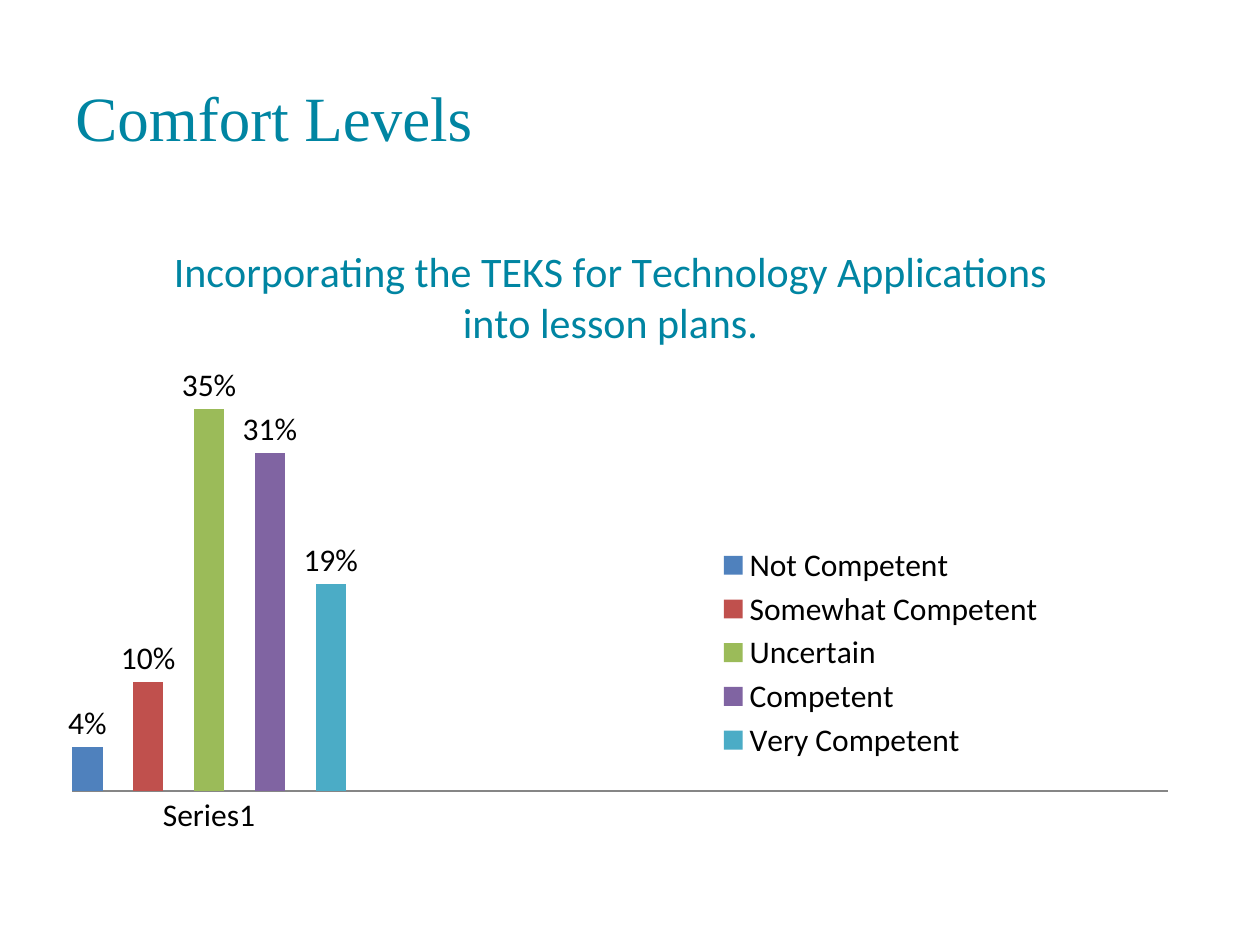
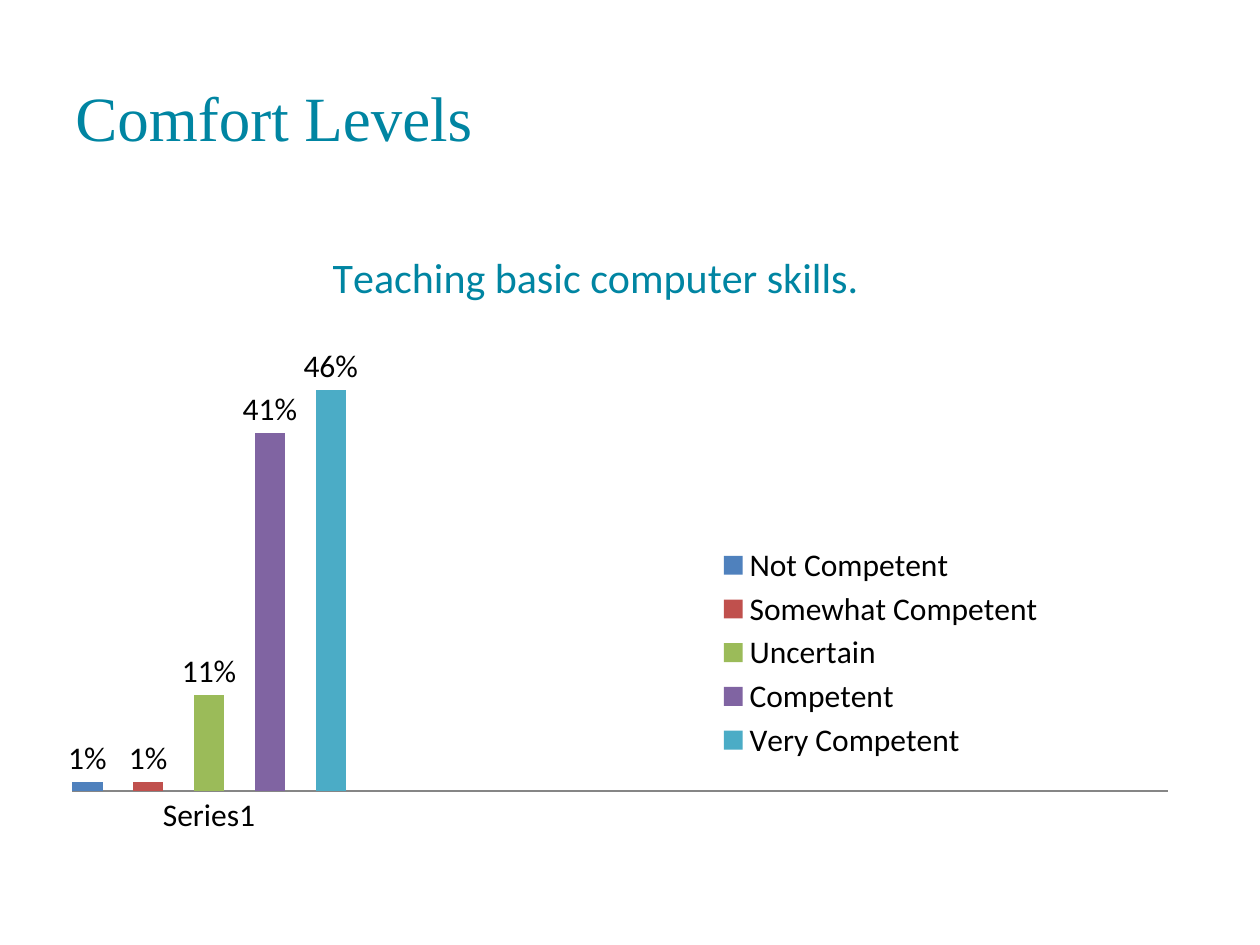
import pptx
import pptx.chart.data
import pptx.dml.color
import pptx.enum.chart
import pptx.enum.text
import pptx.oxml
import pptx.oxml.ns
import pptx.util
from pptx.dml.color import RGBColor
from pptx.util import Inches, Pt

TEAL = RGBColor(0x00, 0x85, 0xA2)
BLACK = RGBColor(0x00, 0x00, 0x00)
WHITE = RGBColor(0xFF, 0xFF, 0xFF)
AXIS_GRAY = RGBColor(0x86, 0x86, 0x86)
LEVELS = {
    "Not Competent": RGBColor(0x4F, 0x81, 0xBD),
    "Somewhat Competent": RGBColor(0xC0, 0x50, 0x4D),
    "Uncertain": RGBColor(0x9B, 0xBB, 0x59),
    "Competent": RGBColor(0x80, 0x64, 0xA2),
    "Very Competent": RGBColor(0x4B, 0xAC, 0xC6),
}
CATEGORIES = ["Series1", "", "", ""]
TITLE_FONT = "Times New Roman"
CHART_FONT = "Calibri"


def format_font(font, name, size, color):
    font.name = name
    font.size = Pt(size)
    font.bold = False
    font.color.rgb = color


def add_slide(presentation, title):
    slide = presentation.slides.add_slide(presentation.slide_layouts[6])
    slide.background.fill.solid()
    slide.background.fill.fore_color.rgb = WHITE
    title_box = slide.shapes.add_textbox(
        Inches(0.5), Inches(0.3), Inches(8.21), Inches(1.25))
    text_frame = title_box.text_frame
    text_frame.word_wrap = True
    text_frame.vertical_anchor = pptx.enum.text.MSO_ANCHOR.MIDDLE
    text_frame.text = title
    format_font(text_frame.paragraphs[0].runs[0].font, TITLE_FONT, 36, TEAL)
    return slide


def set_layout(element, index, inner=False, **fractions):
    for old_layout in element.findall(pptx.oxml.ns.qn("c:layout")):
        element.remove(old_layout)
    target = '<c:layoutTarget val="inner"/>' if inner else ""
    modes = "".join(f'<c:{key}Mode val="edge"/>' for key in "xy")
    values = "".join(
        f'<c:{key} val="{value}"/>' for key, value in fractions.items())
    element.insert(index, pptx.oxml.parse_xml(
        f'<c:layout {pptx.oxml.ns.nsdecls("c")}><c:manualLayout>'
        f'{target}{modes}{values}</c:manualLayout></c:layout>'))


def format_title(chart, text, x, y):
    chart.has_title = True
    title = chart.chart_title
    title.text_frame.text = text
    format_font(title.text_frame.paragraphs[0].runs[0].font,
                CHART_FONT, 24, TEAL)
    title.include_in_layout = False
    set_layout(title._element, 1, x=x, y=y)


def format_legend(chart):
    chart.has_legend = True
    legend = chart.legend
    legend.position = pptx.enum.chart.XL_LEGEND_POSITION.BOTTOM
    legend.include_in_layout = False
    format_font(legend.font, CHART_FONT, 18, BLACK)
    set_layout(legend._element, 1, x=0.57, y=0.53, w=0.32, h=0.36)


def format_axes(chart, maximum):
    no_ticks = pptx.enum.chart.XL_TICK_MARK.NONE
    category_axis = chart.category_axis
    category_axis.major_tick_mark = no_ticks
    category_axis.minor_tick_mark = no_ticks
    category_axis.has_major_gridlines = False
    category_axis.format.line.color.rgb = AXIS_GRAY
    category_axis.format.line.width = Pt(0.75)
    value_axis = chart.value_axis
    value_axis.minimum_scale = 0
    value_axis.maximum_scale = maximum
    value_axis.has_major_gridlines = False
    value_axis.visible = False


def format_columns(plot):
    plot.gap_width = 0
    plot.overlap = -100
    plot.vary_by_categories = False
    for series, color in zip(plot.series, LEVELS.values()):
        series.format.fill.solid()
        series.format.fill.fore_color.rgb = color
        series.invert_if_negative = False
        labels = series.data_labels
        labels.show_value = True
        labels.number_format = "0%"
        labels.number_format_is_linked = False
        labels.position = pptx.enum.chart.XL_LABEL_POSITION.OUTSIDE_END
        format_font(labels.font, CHART_FONT, 18, BLACK)


def add_comfort_chart(slide, question, title_x, title_y, shares, maximum):
    chart_data = pptx.chart.data.CategoryChartData(number_format="0%")
    chart_data.categories = CATEGORIES
    for level, share in zip(LEVELS, shares):
        chart_data.add_series(level, [share, None, None, None])
    chart = slide.shapes.add_chart(
        pptx.enum.chart.XL_CHART_TYPE.COLUMN_CLUSTERED,
        Inches(0.42), Inches(1.67), Inches(9), Inches(4.95), chart_data).chart
    format_font(chart.font, CHART_FONT, 18, BLACK)
    format_title(chart, question, title_x, title_y)
    format_legend(chart)
    format_axes(chart, maximum)
    format_columns(chart.plots[0])
    set_layout(chart._chartSpace.chart.plotArea, 0, inner=True,
               x=0.017, y=0.232, w=0.966, h=0.7)


def main():
    presentation = pptx.Presentation()
    presentation.slide_width = Inches(10)
    presentation.slide_height = Inches(7.5)
    questions = [
        ("Incorporating the TEKS for Technology Applications into lesson plans.",
         0.1, 0.04, [0.04, 0.10, 0.35, 0.31, 0.19], 0.4 - 0.05 + 0.05),
        ("Teaching basic computer skills.",
         0.24, 0.05, [0.01, 0.01, 0.11, 0.41, 0.46], 0.5),
    ]
    for question in questions:
        slide = add_slide(presentation, "Comfort Levels")
        add_comfort_chart(slide, *question)
    presentation.save("out.pptx")


if __name__ == "__main__":
    main()
